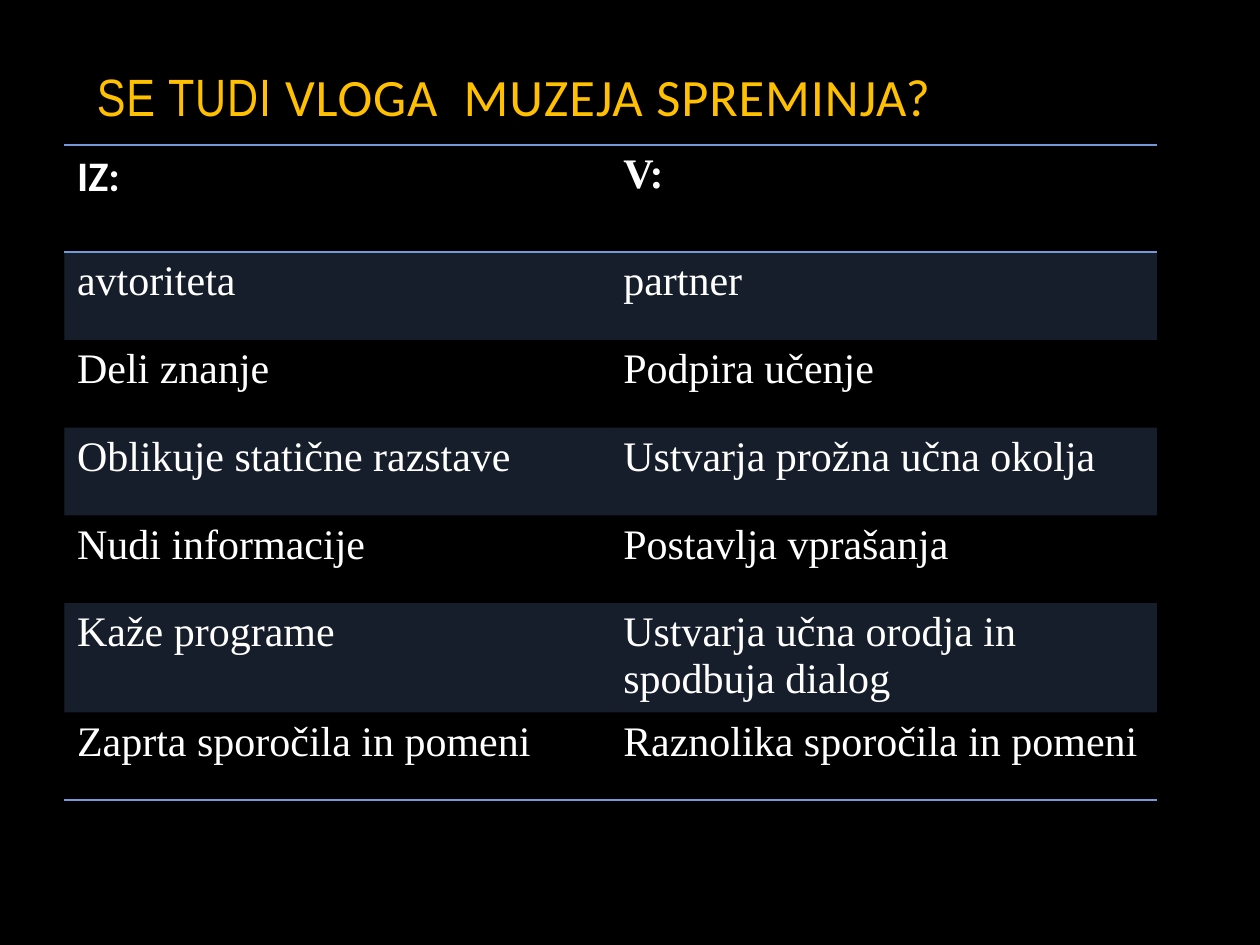
import dataclasses

import lxml.etree
import pptx
import pptx.dml.color
import pptx.enum.dml
import pptx.enum.text
import pptx.oxml.ns
import pptx.util
from pptx.util import Cm, Pt


@dataclasses.dataclass(frozen=True)
class Theme:
    """Colours, fonts and type sizes of the slide."""
    background: str = "000000"
    heading: str = "FFC000"
    text: str = "FFFFFF"
    accent: str = "7598D9"
    band_opacity: int = 20
    title_size: int = 30
    table_size: int = 24
    narrow: str = "Arial Narrow"
    sans: str = "Calibri"
    serif: str = "Times New Roman"


THEME = Theme()
NO_STYLE = "{2D5ABB26-0587-4C30-8999-92F81FD0307C}"
ROLES = [
    ("IZ:", "V:"),
    ("avtoriteta", "partner"),
    ("Deli znanje", "Podpira učenje"),
    ("Oblikuje statične razstave", "Ustvarja prožna učna okolja"),
    ("Nudi informacije", "Postavlja vprašanja"),
    ("Kaže programe", "Ustvarja učna orodja in spodbuja dialog"),
    ("Zaprta sporočila in pomeni", "Raznolika sporočila in pomeni"),
]
ROW_HEIGHTS = [2.16, 1.77, 1.77, 1.77, 1.77, 2.2, 1.77]


def rgb(value):
    """Turn a hex string into a colour."""
    return pptx.dml.color.RGBColor.from_string(value)


def sub(parent, tag, **attributes):
    """Append a DrawingML element to its parent."""
    return lxml.etree.SubElement(parent, pptx.oxml.ns.qn(tag), attributes)


def add_run(paragraph, wording, font_name, size, colour, bold=False):
    """Add one formatted run of text."""
    run = paragraph.add_run()
    run.text = wording
    run.font.name = font_name
    run.font.size = Pt(size)
    run.font.bold = bold
    run.font.color.rgb = rgb(colour)
    return run


def add_title(slide):
    """Place and fill the title placeholder."""
    title = slide.shapes.title
    title.left, title.top, title.width, title.height = Cm(1.7), Cm(1.32), Cm(22.02), Cm(1.37)
    frame = title.text_frame
    frame.word_wrap = True
    frame.auto_size = pptx.enum.text.MSO_AUTO_SIZE.NONE
    frame.vertical_anchor = pptx.enum.text.MSO_ANCHOR.BOTTOM
    heading = frame.paragraphs[0]
    heading.alignment = pptx.enum.text.PP_ALIGN.LEFT
    for wording, font_name in (("SE TUDI ", THEME.narrow), ("VLOGA  MUZEJA SPREMINJA?", THEME.sans)):
        run = add_run(heading, wording, font_name, THEME.title_size, THEME.heading)
        run.font._element.set("spc", "50")


def add_rule(cell, side):
    """Draw an accent border on one side of a cell."""
    rule = sub(cell._tc.get_or_add_tcPr(), side, w=str(Pt(1)))
    sub(sub(rule, "a:solidFill"), "a:srgbClr", val=THEME.accent)


def fill_cell(cell, banded):
    """Fill a cell with the translucent band or leave it clear."""
    if not banded:
        cell.fill.background()
        return
    cell.fill.solid()
    cell.fill.fore_color.rgb = rgb(THEME.accent)
    colour = cell._tc.tcPr.find(".//" + pptx.oxml.ns.qn("a:solidFill") + "[last()]/")
    sub(colour, "a:alpha", val=str(THEME.band_opacity * 1000))


def add_roles_table(slide):
    """Build the table of old and new museum roles."""
    frame = slide.shapes.add_table(len(ROLES), 2, Cm(1.3), Cm(2.92), Cm(22.02), Cm(sum(ROW_HEIGHTS)))
    roles = frame.table
    roles.first_row = roles.horz_banding = False
    roles._tbl.tblPr.find(pptx.oxml.ns.qn("a:tableStyleId")).text = NO_STYLE
    for row_index, (pair, height) in enumerate(zip(ROLES, ROW_HEIGHTS)):
        roles.rows[row_index].height = Cm(height)
        header = row_index == 0
        for column_index, wording in enumerate(pair):
            cell = roles.cell(row_index, column_index)
            font_name = THEME.sans if header and column_index == 0 else THEME.serif
            add_run(cell.text_frame.paragraphs[0], wording, font_name, THEME.table_size, THEME.text, header)
            if header:
                add_rule(cell, "a:lnT")
            if header or row_index == len(ROLES) - 1:
                add_rule(cell, "a:lnB")
            fill_cell(cell, row_index % 2 == 1)


def main():
    """Create and save the slide."""
    deck = pptx.Presentation()
    deck.slide_width, deck.slide_height = Cm(25.4), Cm(19.05)
    slide = deck.slides.add_slide(deck.slide_layouts[5])
    slide.background.fill.solid()
    slide.background.fill.fore_color.rgb = rgb(THEME.background)
    add_title(slide)
    add_roles_table(slide)
    deck.save("out.pptx")


if __name__ == "__main__":
    main()
